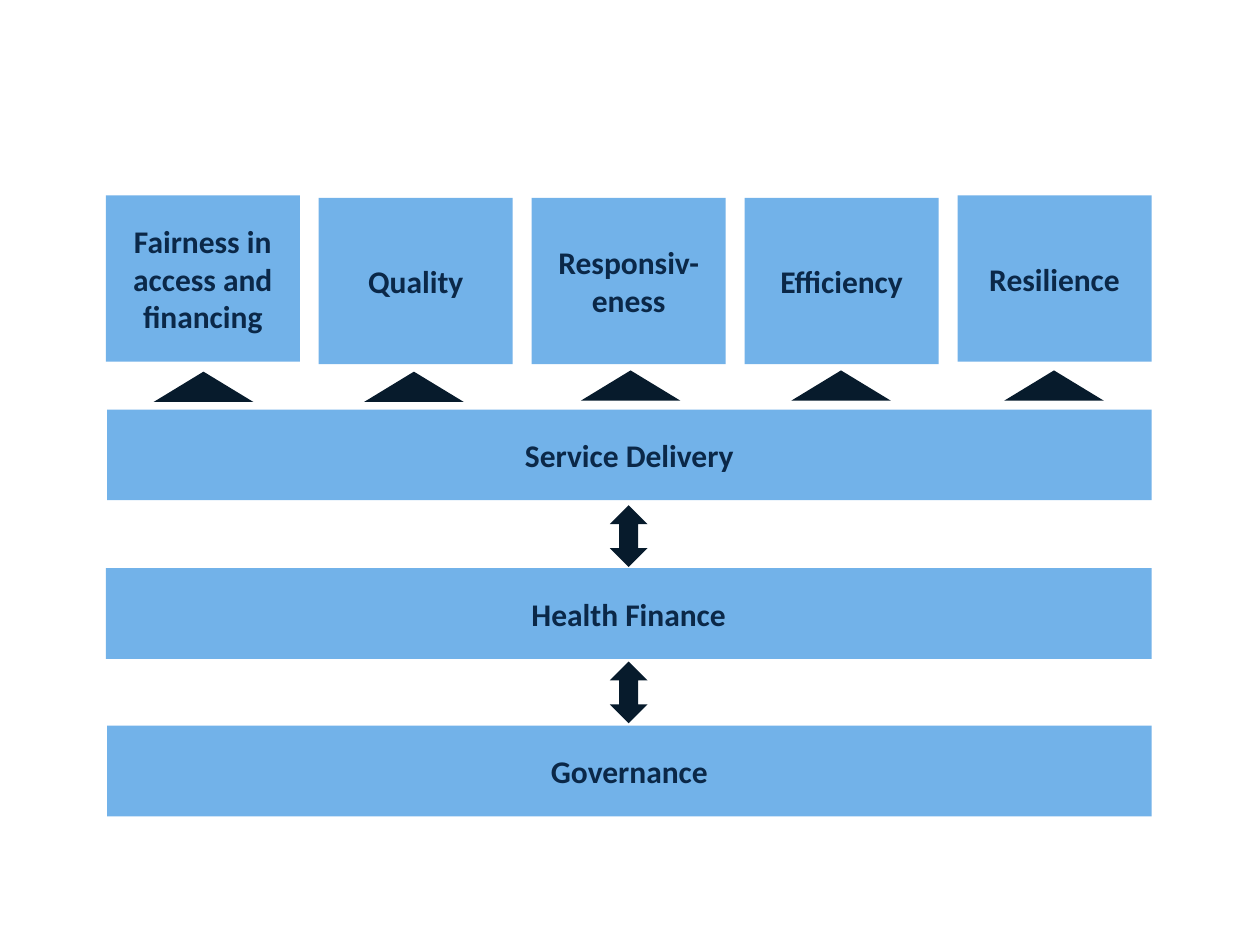
import pptx
import pptx.util
import pptx.dml.color
import pptx.enum.shapes
import pptx.enum.text

Inches = pptx.util.Inches
Preset = pptx.enum.shapes.MSO_SHAPE

COLOURS = {"block": "72B2E9", "arrow": "071B2C", "text": "0B2848"}
FONT = {"name": "Calibri", "size": pptx.util.Pt(18), "bold": True}

# Goals: label, top of block, left and top of the triangle below it
GOALS = [
    ("Fairness in access and financing", 1.55, 1.22, 2.95),
    ("Quality", 1.57, 2.89, 2.95),
    ("Responsiv-eness", 1.57, 4.61, 2.94),
    ("Efficiency", 1.57, 6.28, 2.94),
    ("Resilience", 1.55, 7.97, 2.94),
]
# Functions: label, left, top
FUNCTIONS = [
    ("Service Delivery", 0.85, 3.25),
    ("Health Finance", 0.84, 4.51),
    ("Governance", 0.85, 5.76),
]
LINK_TOPS = [4.01, 5.25]

LEFT, RIGHT = 0.84, 9.14
GOAL_WIDTH, GOAL_HEIGHT, GOAL_PITCH = 1.54, 1.32, 1.69
FUNCTION_HEIGHT = 0.72
TRIANGLE_WIDTH, TRIANGLE_HEIGHT = 0.79, 0.24
LINK_WIDTH, LINK_HEIGHT = 0.3, 0.49


def rgb(role):
    return pptx.dml.color.RGBColor.from_string(COLOURS[role])


def add_preset(slide, preset, role, *box):
    """Add a flat, unoutlined shape; box is left, top, width, height in inches."""
    shape = slide.shapes.add_shape(preset, *map(Inches, box))
    shape.shadow.inherit = False
    shape.fill.solid()
    shape.fill.fore_color.rgb = rgb(role)
    shape.line.fill.background()
    return shape


def add_block(slide, label, *box):
    frame = add_preset(slide, Preset.RECTANGLE, "block", *box).text_frame
    frame.word_wrap = True
    frame.vertical_anchor = pptx.enum.text.MSO_ANCHOR.MIDDLE
    paragraph = frame.paragraphs[0]
    paragraph.alignment = pptx.enum.text.PP_ALIGN.CENTER
    run = paragraph.add_run()
    run.text = label
    for attribute, value in FONT.items():
        setattr(run.font, attribute, value)
    run.font.color.rgb = rgb("text")


def main():
    deck = pptx.Presentation()
    deck.slide_width, deck.slide_height = Inches(10), Inches(7.5)
    slide = deck.slides.add_slide(deck.slide_layouts.get_by_name("Blank"))

    for label, left, top in FUNCTIONS:
        add_block(slide, label, left, top, RIGHT - left, FUNCTION_HEIGHT)

    link_left = (LEFT + RIGHT - LINK_WIDTH) / 2
    for top in LINK_TOPS:
        add_preset(slide, Preset.UP_DOWN_ARROW, "arrow",
                   link_left, top, LINK_WIDTH, LINK_HEIGHT)

    for column, (label, top, triangle_left, triangle_top) in enumerate(GOALS):
        add_block(slide, label, LEFT + column * GOAL_PITCH, top, GOAL_WIDTH, GOAL_HEIGHT)
        add_preset(slide, Preset.ISOSCELES_TRIANGLE, "arrow",
                   triangle_left, triangle_top, TRIANGLE_WIDTH, TRIANGLE_HEIGHT)

    deck.save("out.pptx")


if __name__ == "__main__":
    main()
